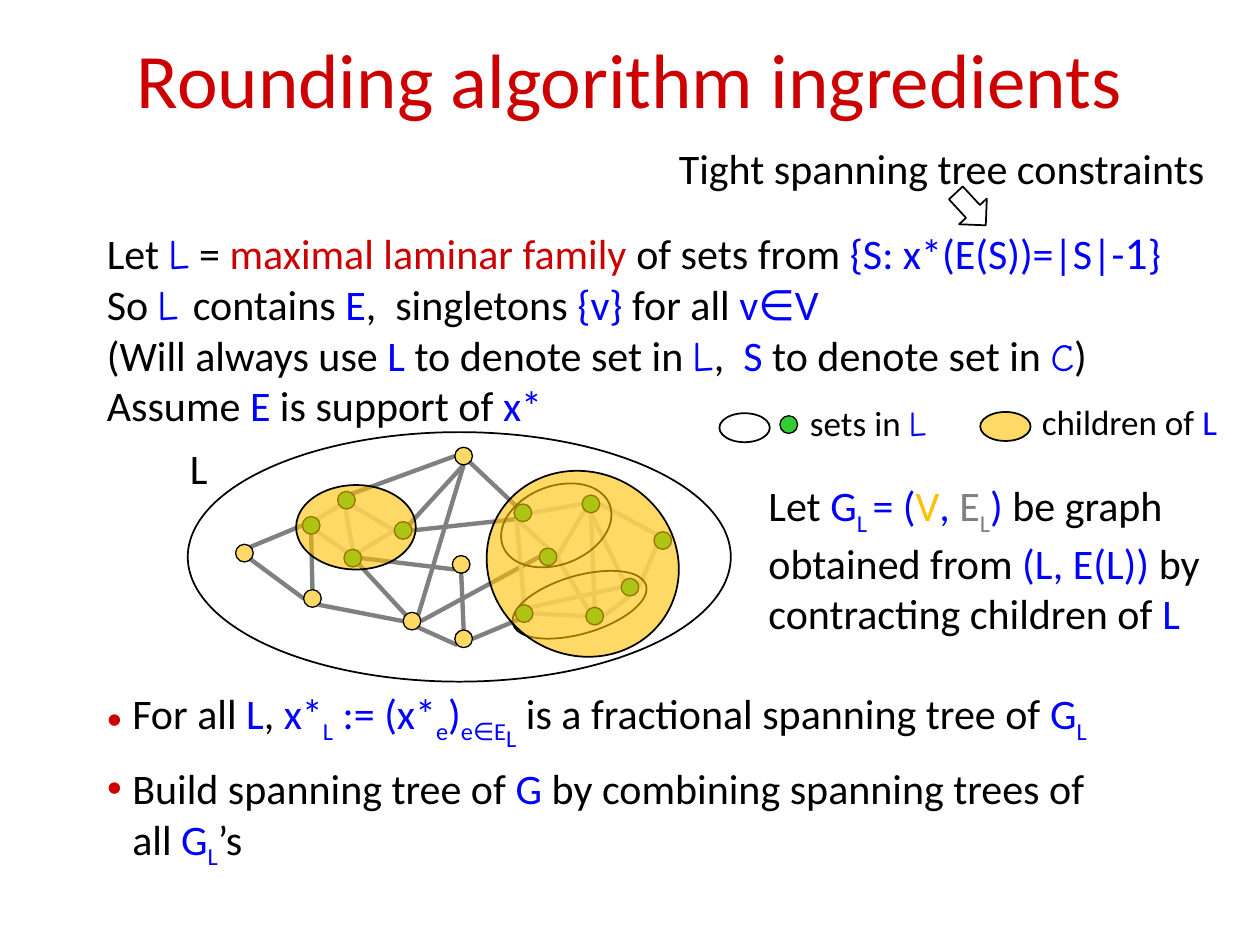
from lxml import etree
from pptx import Presentation
from pptx import util as u
from pptx.dml.color import RGBColor
from pptx.enum import shapes, text
from pptx.oxml.ns import qn

BLACK, WHITE, BLUE, RED = "000000", "FFFFFF", "0000FF", "CC0000"
GOLD, GREEN, GRAY, PALE = "FFC000", "33CC33", "808080", "D9D9D9"
CM_PER_INCH = 2.54
DOT = 0.14

STYLES = {
    "plain": {},
    "math": {"color": BLUE},
    "hand": {"color": BLUE, "font": "Comic Neue"},
    "small_hand": {"color": BLUE, "font": "Comic Neue", "size": 22},
    "big": {"color": BLUE, "size": 26},
    "sub": {"color": BLUE, "base": -25},
    "subsub": {"color": BLUE, "base": -42},
    "red": {"color": RED},
    "gold": {"color": GOLD},
    "gray": {"color": GRAY},
    "gray_sub": {"color": GRAY, "base": -25},
}


def rgb(value):
    return RGBColor.from_string(value)


def cm(*inches):
    return [u.Cm(value * CM_PER_INCH) for value in inches]


class SlideWriter:
    font = "Calibri"

    def __init__(self, slide):
        self.slide = slide

    def format_run(self, run, size, color=BLACK, font=None, base=0):
        run.font.size = u.Pt(size)
        run.font.name = font or self.font
        run.font.color.rgb = rgb(color)
        if base:
            run.font._element.set("baseline", str(base * 1000))

    def place(self, holder, box):
        holder.left, holder.top, holder.width, holder.height = cm(*box)
        holder.text_frame.auto_size = text.MSO_AUTO_SIZE.NONE

    def fill_paragraphs(self, frame, paragraphs, size):
        for index, pieces in enumerate(paragraphs):
            paragraph = frame.add_paragraph() if index else frame.paragraphs[0]
            for words, style in pieces:
                run = paragraph.add_run()
                run.text = words
                self.format_run(run, **{"size": size, **STYLES[style]})

    def title(self, words, box):
        holder = self.slide.shapes.title
        self.place(holder, box)
        holder.text_frame.text = words
        holder.text_frame.vertical_anchor = text.MSO_ANCHOR.MIDDLE
        paragraph = holder.text_frame.paragraphs[0]
        paragraph.alignment = text.PP_ALIGN.CENTER
        self.format_run(paragraph.runs[0], 44, RED)

    def bullets(self, paragraphs, box, size=24):
        holder = self.slide.placeholders[1]
        self.place(holder, box)
        self.fill_paragraphs(holder.text_frame, paragraphs, size)
        indent = cm(0.2)[0]
        for paragraph in holder.text_frame.paragraphs:
            paragraph.space_before = u.Pt(6)
            props = paragraph._p.get_or_add_pPr()
            props.set("marL", str(indent))
            props.set("indent", str(-indent))
            bullet_color = etree.SubElement(props, qn("a:buClr"))
            etree.SubElement(bullet_color, qn("a:srgbClr"), val=RED)
            etree.SubElement(props, qn("a:buChar"), char="•")

    def text_box(self, paragraphs, box, size=24):
        frame = self.slide.shapes.add_textbox(*cm(*box)).text_frame
        frame.word_wrap = True
        frame.auto_size = text.MSO_AUTO_SIZE.SHAPE_TO_FIT_TEXT
        self.fill_paragraphs(frame, paragraphs, size)

    def edge(self, start_x, start_y, end_x, end_y, color):
        line = self.slide.shapes.add_connector(
            shapes.MSO_CONNECTOR.STRAIGHT, *cm(start_x, start_y, end_x, end_y))
        line.line.color.rgb = rgb(color)
        line.line.width = u.Pt(2.5)
        etree.SubElement(line._element.spPr, qn("a:effectLst"))

    def outline(self, box, kind=shapes.MSO_SHAPE.OVAL, fill=None, alpha=None,
                rotation=0, weight=1):
        shape = self.slide.shapes.add_shape(kind, *cm(*box))
        shape.shadow.inherit = False
        shape.rotation = rotation
        shape.line.color.rgb = rgb(BLACK)
        shape.line.width = u.Pt(weight)
        if fill is None:
            shape.fill.background()
            return
        shape.fill.solid()
        shape.fill.fore_color.rgb = rgb(fill)
        if alpha:
            color = shape._element.spPr.find(qn("a:solidFill"))[0]
            etree.SubElement(color, qn("a:alpha"), val=str(alpha * 1000))

    def child_set(self, box, rotation=0):
        self.outline(box, fill=GOLD, alpha=60, rotation=rotation)

    def vertex(self, left, top, fill, alpha=None):
        self.outline((left, top, DOT, DOT), fill=fill, alpha=alpha, weight=0.75)


FAMILY = [
    [("Let ", "plain"), ("L", "hand"), (" = ", "plain"),
     ("maximal laminar family", "red"), (" of sets from ", "plain"),
     ("{S: x*(E(S))=|S|-", "math"), ("1", "big"), ("}", "math")],
    [("So ", "plain"), ("L ", "hand"), ("contains ", "plain"), ("E", "math"),
     (",  singletons ", "plain"), ("{v}", "math"), (" for all ", "plain"),
     ("v∈V", "math")],
    [("(Will always use ", "plain"), ("L", "math"),
     (" to denote set in ", "plain"), ("L", "hand"), (",  ", "plain"),
     ("S", "math"), (" to denote set in ", "plain"), ("C", "small_hand"),
     (")", "plain")],
    [("Assume ", "plain"), ("E", "math"), (" is support of ", "plain"),
     ("x*", "math")],
]
CONTRACTION = [
    [("Let ", "plain"), ("G", "math"), ("L ", "sub"), ("= (", "math"),
     ("V", "gold"), (", ", "math"), ("E", "gray"), ("L", "gray_sub"),
     (") ", "math"), ("be graph obtained from ", "plain"),
     ("(L, E(L)) ", "math"), ("by contracting children of ", "plain"),
     ("L", "math")],
]
CONCLUSIONS = [
    [("For all ", "plain"), ("L", "math"), (", ", "plain"), ("x*", "math"),
     ("L", "sub"), (" := (x*", "math"), ("e", "sub"), (")", "math"),
     ("e∈E", "sub"), ("L", "subsub"),
     (" is a fractional spanning tree of ", "plain"), ("G", "math"),
     ("L", "sub")],
    [("Build spanning tree of ", "plain"), ("G", "math"),
     (" by combining spanning trees of all ", "plain"), ("G", "math"),
     ("L", "sub"), ("’s", "plain")],
]

OUTER_EDGES = [
    (3.34, 4.93, 4.28, 4.42), (4.1, 4.02, 3.73, 3.67), (1.99, 4.44, 2.41, 4.75),
    (1.99, 4.34, 2.4, 4.17), (2.47, 4.24, 2.48, 4.68), (2.87, 4.43, 3.61, 4.52),
    (2.79, 3.92, 3.61, 3.62), (2.53, 4.8, 3.2, 4.93), (2.85, 4.48, 3.22, 4.88),
    (3.66, 4.54, 3.68, 5), (3.27, 4.21, 4.1, 4.12), (3.25, 4.16, 3.68, 3.69),
    (3.68, 3.69, 3.32, 4.88), (3.32, 4.98, 3.63, 5.12), (3.75, 5.07, 4.11, 4.92),
]
INNER_EDGES = [
    (4.1, 4.12, 4.16, 4.8), (2.52, 4.22, 2.75, 4.38), (4.76, 4, 5.21, 4.24),
    (4.22, 4.07, 4.62, 4), (4.42, 4.42, 4.64, 4.05), (4.42, 4.42, 4.67, 4.84),
    (4.23, 4.87, 4.65, 4.89), (4.21, 4.82, 4.93, 4.66), (4.69, 4.07, 4.95, 4.61),
    (4.79, 4.89, 5, 4.73), (5.07, 4.66, 5.21, 4.34), (2.79, 4.01, 3.13, 4.21),
    (2.74, 4.03, 2.8, 4.36), (2.85, 4.38, 3.13, 4.21), (4.69, 4.07, 4.72, 4.82),
    (4.1, 4.12, 4.35, 4.35), (2.52, 4.12, 2.7, 4.01),
]
FREE_VERTICES = [(1.87, 4.32), (2.41, 4.68), (3.2, 4.86), (3.59, 4.41),
                 (3.61, 3.55), (3.61, 5)]
CHILD_VERTICES = [(2.4, 4.1), (2.68, 3.9), (2.73, 4.36), (3.13, 4.14),
                  (4.08, 4), (4.62, 3.93), (4.28, 4.35), (4.09, 4.8),
                  (4.93, 4.59), (4.65, 4.82), (5.19, 4.22)]


def main():
    deck = Presentation()
    deck.slide_width, deck.slide_height = cm(10, 7.5)
    page = SlideWriter(deck.slides.add_slide(deck.slide_layouts[1]))

    page.title("Rounding algorithm ingredients", (0.75, 0.16, 8.5, 0.92))
    page.text_box(FAMILY, (0.75, 1.73, 8.84, 1.75))
    page.text_box([[("Tight spanning tree constraints", "plain")]],
                  (5.29, 1.08, 4.4, 0.5))
    page.outline((7.53, 1.51, 0.35, 0.3), shapes.MSO_SHAPE.RIGHT_ARROW,
                 rotation=47.2)
    page.bullets(CONCLUSIONS, (0.75, 5.41, 8.28, 1.4))
    page.text_box(CONTRACTION, (6, 3.76, 3.85, 1.31))

    for color, edges in ((GRAY, OUTER_EDGES), (PALE, INNER_EDGES)):
        for ends in edges:
            page.edge(*ends, color)
    page.outline((1.49, 3.43, 4.31, 1.98))
    page.outline((3.96, 3.86, 0.91, 0.62), rotation=338.5)
    page.outline((4.05, 4.57, 1.1, 0.46), rotation=343.7)
    page.text_box([[("L", "plain")]], (1.41, 3.46, 0.37, 0.5))
    for spot in FREE_VERTICES:
        page.vertex(*spot, GOLD, alpha=60)
    for spot in CHILD_VERTICES:
        page.vertex(*spot, GREEN)
    page.child_set((2.35, 3.85, 0.95, 0.67))
    page.child_set((3.85, 3.75, 1.55, 1.45), rotation=30.3)

    page.outline((5.71, 3.28, 0.4, 0.23))
    page.vertex(6.19, 3.3, GREEN)
    page.text_box([[("sets in ", "plain"), ("L", "hand")]],
                  (6.33, 3.14, 1.39, 0.44), size=20)
    page.child_set((7.78, 3.27, 0.4, 0.23))
    page.text_box([[("children of ", "plain"), ("L", "math")]],
                  (8.17, 3.13, 1.63, 0.44), size=20)

    deck.save("out.pptx")


if __name__ == "__main__":
    main()
